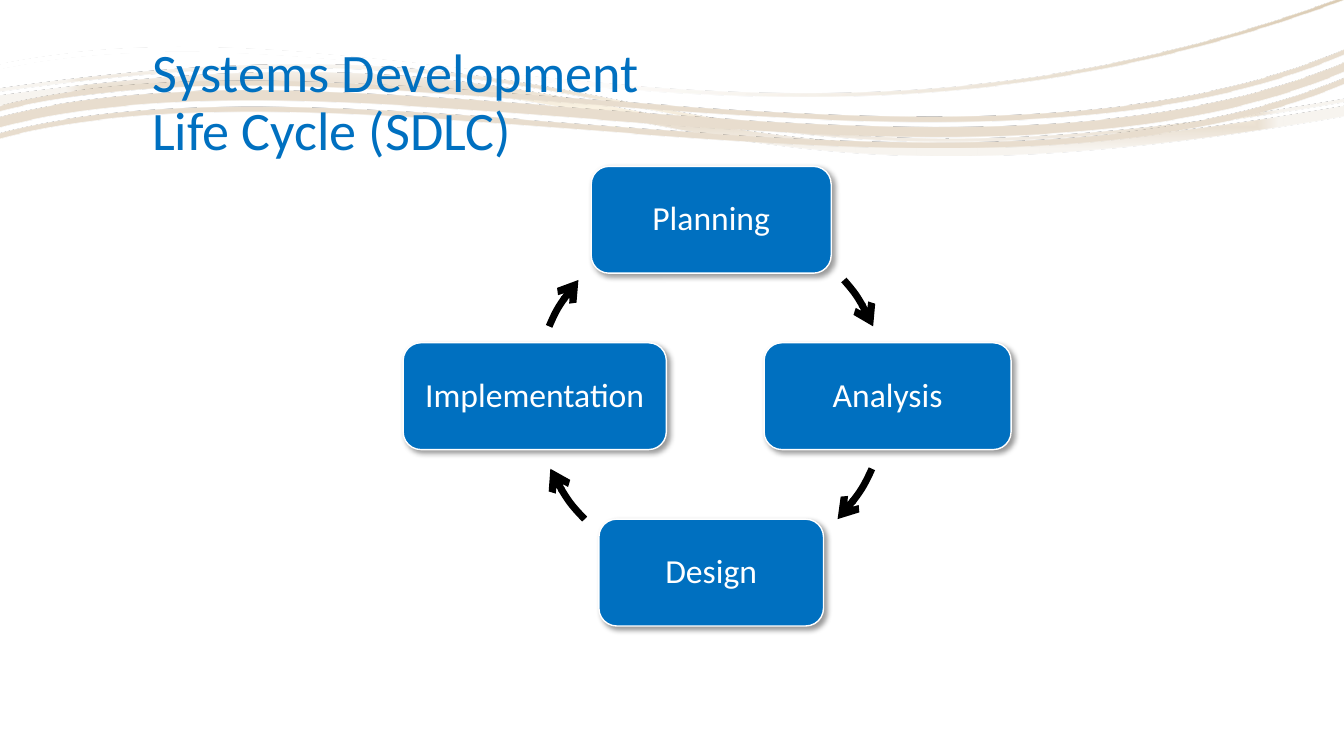
"""Build the Systems Development Life Cycle slide."""
from math import cos, radians, sin, tan

from lxml import etree
from pptx import Presentation
from pptx.dml.color import RGBColor
from pptx.enum.shapes import MSO_SHAPE
from pptx.enum.text import MSO_ANCHOR, MSO_AUTO_SIZE, PP_ALIGN
from pptx.oxml import parse_xml
from pptx.oxml.ns import nsdecls, qn
from pptx.util import Pt

ROUNDED = MSO_SHAPE.ROUNDED_RECTANGLE
MIDDLE, BOTTOM = MSO_ANCHOR.MIDDLE, MSO_ANCHOR.BOTTOM
LEFT, CENTER = PP_ALIGN.LEFT, PP_ALIGN.CENTER
NO_FIT = MSO_AUTO_SIZE.NONE

BLUE = RGBColor(0x00, 0x70, 0xC0)
WHITE = RGBColor(0xFF, 0xFF, 0xFF)
BLACK = RGBColor(0x00, 0x00, 0x00)
CREAM = RGBColor(0xFA, 0xF1, 0xDF)
SAND = RGBColor(0xEA, 0xE0, 0xD2)
IVORY = RGBColor(0xF7, 0xF4, 0xEF)
TAN = RGBColor(0xCB, 0xB4, 0x91)
BEIGE = RGBColor(0xE8, 0xDD, 0xCE)

WIDTH, HEIGHT = 960, 540
TILT = -3.5
CYCLE_X, CYCLE_Y, RADIUS = 508, 283, 126
CYCLE_FRAME = (CYCLE_X - RADIUS, CYCLE_Y - RADIUS, 2 * RADIUS, 2 * RADIUS)
STAGE_HEIGHT = 76.3
STAGES = [("Planning", 171.4, -90), ("Analysis", 176.4, 0),
          ("Design", 160.4, 90), ("Implementation", 188, 180)]
ARROWS = [(-41.2, -23.3), (24.3, 44.2), (135.8, 155.7), (203.3, 221.2)]

WAVE_X = (0, 268.6, 542.9, WIDTH)
RIBBON_X = (0, 251.3, 687.6, WIDTH)
LEAD_X = (0, 89.3, 159.8, 220.3)
CREST_X = (220.3, 482.4, 531.4, WIDTH)
RETURN_X = (WIDTH, 433.4, 480.2, 0)


def edge(xs, ys):
    """Return the four control points of a curved edge."""
    return list(zip(xs, ys))


def ribbon(xs, upper, lower):
    """Return the two edges that bound a ribbon."""
    return [edge(xs, upper), edge(xs, lower)[::-1]]


def on_cycle(angle, lead=0):
    """Return a point on the cycle, moved along the tangent by a share of the radius."""
    across, down = cos(radians(angle)), sin(radians(angle))
    return (CYCLE_X + RADIUS * (across - lead * down),
            CYCLE_Y + RADIUS * (down + lead * across))


def turn(point, frame, angle):
    """Turn a point back about the centre of a frame rotated by an angle."""
    left, top, width, height = frame
    x, y = left + width / 2, top + height / 2
    across, down = cos(radians(angle)), sin(radians(angle))
    dx, dy = point[0] - x, point[1] - y
    return Pt(x + dx * across + dy * down), Pt(y - dx * down + dy * across)


def write(frame, text, size=24, color=WHITE, align=CENTER, anchor=MIDDLE, inset=7.2):
    """Fill a text frame with one formatted paragraph."""
    frame.word_wrap = True
    frame.auto_size = NO_FIT
    frame.vertical_anchor = anchor
    frame.margin_left = frame.margin_right = Pt(inset)
    para = frame.paragraphs[0]
    para.text = text
    para.alignment = align
    para.line_spacing = 0.9
    for span in para.runs:
        span.font.name = "Calibri"
        span.font.size = Pt(size)
        span.font.color.rgb = color


class CycleSlide:
    """Hold the current slide and draw its elements."""

    def __init__(self, deck):
        """Add a title-only slide to the deck."""
        self.slide = deck.slides.add_slide(deck.slide_layouts[5])
        self.shapes = self.slide.shapes

    def outline(self, contours, frame, angle=0, close=True):
        """Draw contours of Bezier curves inside a frame."""
        builder, joins = None, []
        for contour in contours:
            start = turn(contour[0][0], frame, angle)
            if builder:
                builder.move_to(*start)
            else:
                builder = self.shapes.build_freeform(*start, scale=1.0)
            points, previous = [], contour[0][0]
            for curve in contour:
                joined = curve[0] == previous
                joins.append(joined)
                points += curve[1:] if joined else curve
                previous = curve[-1]
            builder.add_line_segments([turn(point, frame, angle) for point in points],
                                      close=close)
        shape = builder.convert_to_shape()
        self.bend(shape, joins)
        self.fit(shape, frame)
        shape.rotation = angle
        shape.shadow.inherit = False
        shape.fill.background()
        return shape

    def bend(self, shape, joins):
        """Merge the control points of each curve into one Bezier segment."""
        nodes = iter(shape._element.findall(".//" + qn("a:lnTo")))
        for joined in joins:
            if not joined:
                next(nodes)
            controls = [next(nodes) for _ in range(3)]
            bezier = parse_xml(f'<a:cubicBezTo {nsdecls("a")}/>')
            controls[0].addprevious(bezier)
            for node in controls:
                bezier.append(node[0])
                node.getparent().remove(node)

    def fit(self, shape, frame):
        """Give a freeform its frame while its points stay in place."""
        left, top, width, height = (Pt(length) for length in frame)
        for point in shape._element.iter(qn("a:pt")):
            point.set("x", str(int(point.get("x")) + shape.left - left))
            point.set("y", str(int(point.get("y")) + shape.top - top))
        track = shape._element.find(".//" + qn("a:path"))
        track.set("w", str(width))
        track.set("h", str(height))
        shape.left, shape.top, shape.width, shape.height = left, top, width, height

    def band(self, contours, frame, stops, direction):
        """Draw a decorative band with a gradient fill."""
        shape = self.outline(contours, frame, TILT)
        shape.line.fill.background()
        marks = "".join(
            f'<a:gs pos="{place * 1000}"><a:srgbClr val="{color}">'
            f'<a:alpha val="{alpha * 1000}"/></a:srgbClr></a:gs>'
            for place, color, alpha in stops)
        gradient = parse_xml(f'<a:gradFill {nsdecls("a")} rotWithShape="1">'
                             f'<a:gsLst>{marks}</a:gsLst>{direction}</a:gradFill>')
        properties = shape._element.spPr
        properties.replace(properties.find(qn("a:noFill")), gradient)

    def title(self, text):
        """Place the title above the bands."""
        box = self.shapes.title
        box.left, box.top, box.width, box.height = Pt(101.5), Pt(23.8), Pt(756), Pt(95.8)
        write(box.text_frame, text, size=38.7, color=BLUE, align=LEFT, anchor=BOTTOM)
        self.shapes._spTree.append(box._element)

    def stage(self, text, width, angle):
        """Draw a stage box centred on the cycle."""
        x, y = on_cycle(angle)
        box = self.shapes.add_shape(ROUNDED, Pt(x - width / 2), Pt(y - STAGE_HEIGHT / 2),
                                    Pt(width), Pt(STAGE_HEIGHT))
        box.fill.solid()
        box.fill.fore_color.rgb = BLUE
        box.line.color.rgb = WHITE
        box.line.width = Pt(1)
        box.shadow.inherit = False
        box._element.spPr.find(qn("a:effectLst")).append(parse_xml(
            f'<a:outerShdw {nsdecls("a")} blurRad="{Pt(4)}" dist="{Pt(3)}" dir="2700000">'
            f'<a:srgbClr val="{BLACK}"><a:alpha val="40000"/></a:srgbClr></a:outerShdw>'))
        write(box.text_frame, text, inset=11)

    def arrow(self, start, end):
        """Draw an arc with an arrowhead between two angles."""
        lead = 4 / 3 * tan(radians(end - start) / 4)
        curve = [on_cycle(start), on_cycle(start, lead), on_cycle(end, -lead), on_cycle(end)]
        arc = self.outline([[curve]], CYCLE_FRAME, close=False)
        arc.line.color.rgb = BLACK
        arc.line.width = Pt(5)
        etree.SubElement(arc.line._get_or_add_ln(), qn("a:tailEnd"), type="arrow")


def main():
    """Build and save the deck."""
    deck = Presentation()
    deck.slide_width, deck.slide_height = Pt(WIDTH), Pt(HEIGHT)
    page = CycleSlide(deck)
    page.band(
        [[edge(LEAD_X, (68.4, 56.2, 51.1, 51.8)), edge(CREST_X, (51.8, 53.3, 150.5, 75.6)),
          edge(RETURN_X, (82.8, 175, 7.2, 75.6))],
         [edge(LEAD_X, (63.4, 50.4, 46.1, 46.1)), edge(CREST_X, (46.1, 48.2, 145.4, 70.6)),
          edge(RETURN_X, (72.7, 164.9, -2.9, 65.5))]], (0.7, 28.1, 958.3, 97.2),
        [(0, CREAM, 90), (18, SAND, 100), (37, IVORY, 100), (100, IVORY, 100)],
        '<a:path path="shape"><a:fillToRect l="50000" t="50000" r="50000" b="50000"/></a:path>')
    page.band([ribbon(WAVE_X, (46.1, -10.1, 151.9, -2.2), (49, -7.2, 154.8, 0))],
              (2.2, 10.8, 961.2, 123.1),
              [(36, WHITE, 30), (100, TAN, 100)], '<a:lin ang="2700000" scaled="0"/>')
    page.band([ribbon(RIBBON_X, (95, 27.4, 169.2, 55.4), (98.6, 31, 173.5, 59.8)),
               ribbon(RIBBON_X, (83.5, 15.8, 158.4, 44.6), (90.7, 23, 165.6, 51.1)),
               ribbon(RIBBON_X, (75.6, 10.1, 151.9, 35.3), (79.2, 13.7, 155.5, 38.9))],
              (-0.7, 36.7, 961.9, 82.8), [(36, WHITE, 47), (100, BEIGE, 100)],
              '<a:path path="rect"><a:fillToRect l="100000" t="100000"/></a:path>')
    page.title("Systems Development \vLife Cycle (SDLC)")
    for stage, arrow in zip(STAGES, ARROWS):
        page.stage(*stage)
        page.arrow(*arrow)
    deck.save("out.pptx")


if __name__ == "__main__":
    main()
